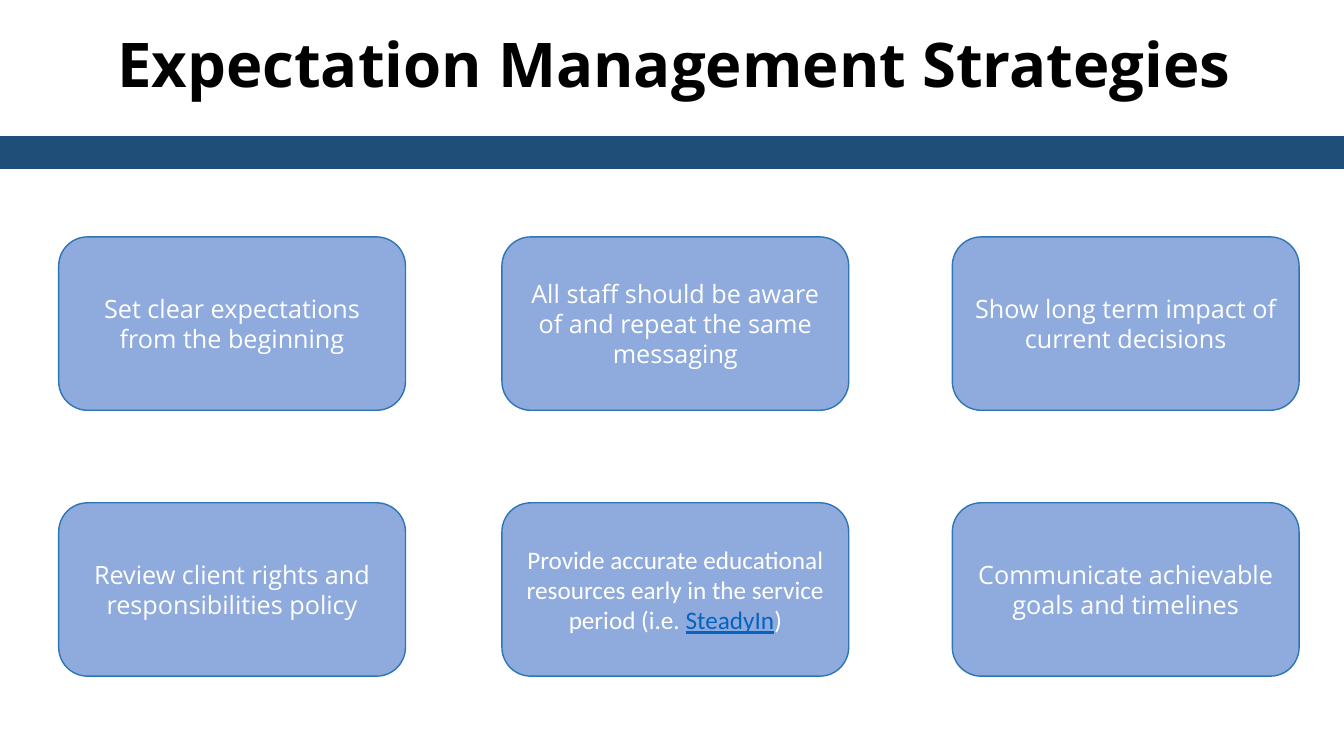
import pptx
import pptx.util
import pptx.dml.color
import pptx.enum.shapes
import pptx.enum.text
from pptx.util import Cm, Pt

SHAPES = pptx.enum.shapes.MSO_SHAPE
ANCHOR = pptx.enum.text.MSO_ANCHOR
AUTO_SIZE = pptx.enum.text.MSO_AUTO_SIZE
ALIGN = pptx.enum.text.PP_ALIGN

WIDTH, HEIGHT = 33.87, 19.05


def rgb(value):
    return pptx.dml.color.RGBColor.from_string(value)


class StrategySlide:
    FONT = "Open Sans"
    BAR = "1F4E79"
    CARD = "8FAADC"
    CARD_LINE = "2E75B6"
    LINK = "0563C1"

    def __init__(self, prs):
        self.s = prs.slides.add_slide(prs.slide_layouts[5])

    def run(self, p, text, size, color, font=FONT, bold=False, underline=False):
        r = p.add_run()
        r.text = text
        r.font.name = font
        r.font.size = Pt(size)
        r.font.bold = bold
        r.font.underline = underline
        r.font.color.rgb = rgb(color)

    def title(self, text, x, y, w, h):
        sp = self.s.shapes.title
        sp.left, sp.top, sp.width, sp.height = Cm(x), Cm(y), Cm(w), Cm(h)
        tf = sp.text_frame
        tf.word_wrap = True
        tf.auto_size = AUTO_SIZE.SHAPE_TO_FIT_TEXT
        tf.vertical_anchor = ANCHOR.MIDDLE
        p = tf.paragraphs[0]
        p.alignment = ALIGN.CENTER
        p.line_spacing = 0.9
        self.run(p, text, 44, "000000", bold=True)

    def box(self, kind, x, y, w, h, fill, line):
        sp = self.s.shapes.add_shape(kind, Cm(x), Cm(y), Cm(w), Cm(h))
        sp.shadow.inherit = False
        sp.fill.solid()
        sp.fill.fore_color.rgb = rgb(fill)
        sp.line.color.rgb = rgb(line)
        sp.line.width = Pt(1)
        return sp

    def bar(self, y, h):
        self.box(SHAPES.RECTANGLE, 0, y, WIDTH, h, self.BAR, self.BAR)

    def card(self, x, y, w, h, parts, font):
        sp = self.box(SHAPES.ROUNDED_RECTANGLE, x, y, w, h, self.CARD, self.CARD_LINE)
        tf = sp.text_frame
        tf.word_wrap = True
        tf.vertical_anchor = ANCHOR.MIDDLE
        p = tf.paragraphs[0]
        p.alignment = ALIGN.CENTER
        for text, linked in parts:
            color = self.LINK if linked else "FFFFFF"
            self.run(p, text, 18, color, font=font, underline=linked)


def main():
    prs = pptx.Presentation()
    prs.slide_width, prs.slide_height = Cm(WIDTH), Cm(HEIGHT)
    slide = StrategySlide(prs)

    # Heading
    slide.title("Expectation Management Strategies", 1.47, 0.64, 31.06, 2.13)
    slide.bar(3.45, 0.8)

    # Strategy cards: three columns by two rows
    columns = (1.48, 12.65, 24)
    rows = (5.97, 12.67)
    strategies = [
        ([("Set clear expectations from the beginning", False)], "Open Sans"),
        ([("All staff should be aware of and repeat the same messaging", False)],
         "Open Sans"),
        ([("Show long term impact of current decisions", False)], "Open Sans"),
        ([("Review client rights and responsibilities policy", False)], "Open Sans"),
        ([("Provide accurate educational resources early in the service period (i.e. ",
           False), ("SteadyIn", True), (")", False)], "Calibri"),
        ([("Communicate achievable goals and timelines", False)], "Open Sans"),
    ]
    for i, (parts, font) in enumerate(strategies):
        row, column = divmod(i, len(columns))
        slide.card(columns[column], rows[row], 8.74, 4.37, parts, font)

    prs.save("out.pptx")


if __name__ == "__main__":
    main()
